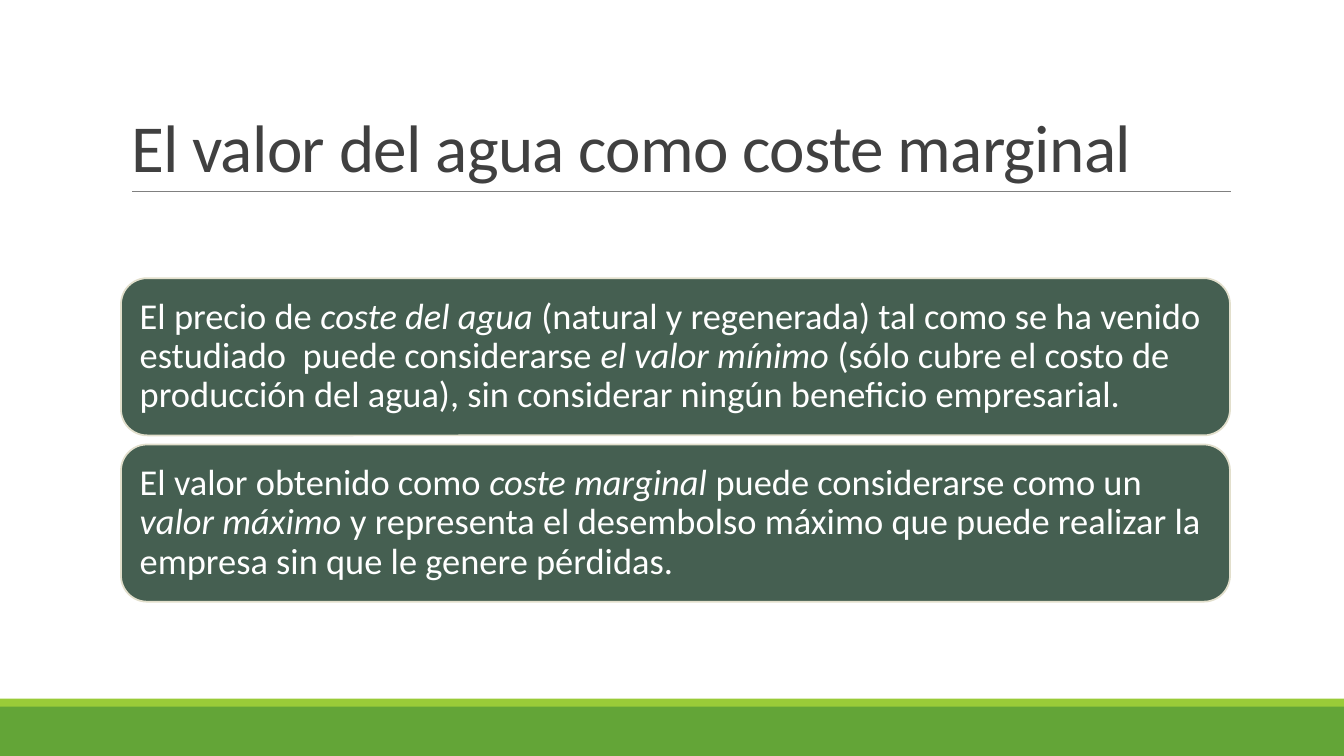
from pptx import Presentation
from pptx.dml.color import RGBColor
from pptx.enum.shapes import MSO_CONNECTOR as Link, MSO_SHAPE as Shape
from pptx.enum.text import MSO_ANCHOR as Anchor, PP_ALIGN as Align
from pptx.oxml.ns import qn
from pptx.util import Inches, Pt
from lxml.etree import SubElement


def tint(code):
    return RGBColor.from_string(code)


class Page:
    face = "Calibri"

    def __init__(self, deck):
        self.slide = deck.slides.add_slide(deck.slide_layouts[5])
        self.shapes = self.slide.shapes

    def style(self, item, form):
        for name, value in form.items():
            setattr(item, name, value)

    def words(self, para, text, size, color, slant=False):
        run = para.add_run()
        run.text = text
        form = {"name": self.face, "size": Pt(size), "italic": slant, "bold": False}
        self.style(run.font, form)
        run.font.color.rgb = tint(color)
        return run

    def title(self, text, box):
        head = self.shapes.title
        self.style(head, dict(zip(("left", "top", "width", "height"), map(Inches, box))))
        self.style(head.text_frame, {"vertical_anchor": Anchor.BOTTOM, "word_wrap": True})
        para = head.text_frame.paragraphs[0]
        self.style(para, {"alignment": Align.LEFT, "line_spacing": 0.85, "space_after": Pt(6)})
        run = self.words(para, text, 48, "404040")
        run.font._element.set("spc", "-50")

    def block(self, kind, box, fill, edge=None):
        item = self.shapes.add_shape(kind, *map(Inches, box))
        item.shadow.inherit = False
        item.fill.solid()
        item.fill.fore_color.rgb = tint(fill)
        if edge:
            item.line.color.rgb = tint(edge)
            item.line.width = Pt(1.25)
        else:
            item.line.fill.background()
        return item

    def card(self, box, parts):
        frame = self.block(Shape.ROUNDED_RECTANGLE, box, "455F51", "E2DFCC").text_frame
        form = {"vertical_anchor": Anchor.MIDDLE, "word_wrap": True}
        for side in ("left", "top", "right", "bottom"):
            form[f"margin_{side}"] = Inches(0.11)
        self.style(frame, form)
        para = frame.paragraphs[0]
        self.style(para, {"alignment": Align.LEFT, "line_spacing": 0.9})
        for place, text in enumerate(parts):
            self.words(para, text, 26, "FFFFFF", place % 2 == 1)

    def rule(self, left, right, top):
        ends = map(Inches, (left, top, right, top))
        line = self.shapes.add_connector(Link.STRAIGHT, *ends)
        line.line.color.rgb = tint("808080")
        line.line.width = Pt(0.5)
        SubElement(line._element.spPr, qn("a:effectLst"))


def main():
    deck = Presentation()
    deck.slide_width, deck.slide_height = Inches(13.33), Inches(7.5)
    page = Page(deck)
    page.block(Shape.RECTANGLE, (0, 7, 13.33, 0.5), "63A537")
    page.block(Shape.RECTANGLE, (0, 6.93, 13.33, 0.08), "99CB38")
    page.rule(1.31, 12.21, 1.9)
    page.title("El valor del agua como coste marginal", (1.2, 0.31, 11, 1.59))
    cards = (
        ("El precio de ", "coste del agua ",
         "(natural y regenerada) tal como se ha venido estudiado  puede considerarse ",
         "el valor mínimo ",
         "(sólo cubre el costo de producción del agua), sin considerar ningún beneficio empresarial."),
        ("El valor obtenido como ", "coste marginal ",
         "puede considerarse como un ", "valor máximo ",
         "y representa el desembolso máximo que puede realizar la empresa sin que le genere pérdidas."),
    )
    for row, parts in enumerate(cards):
        page.card((1.2, 2.76 + row * 1.65, 11, 1.56), parts)
    deck.save("out.pptx")


if __name__ == "__main__":
    main()
